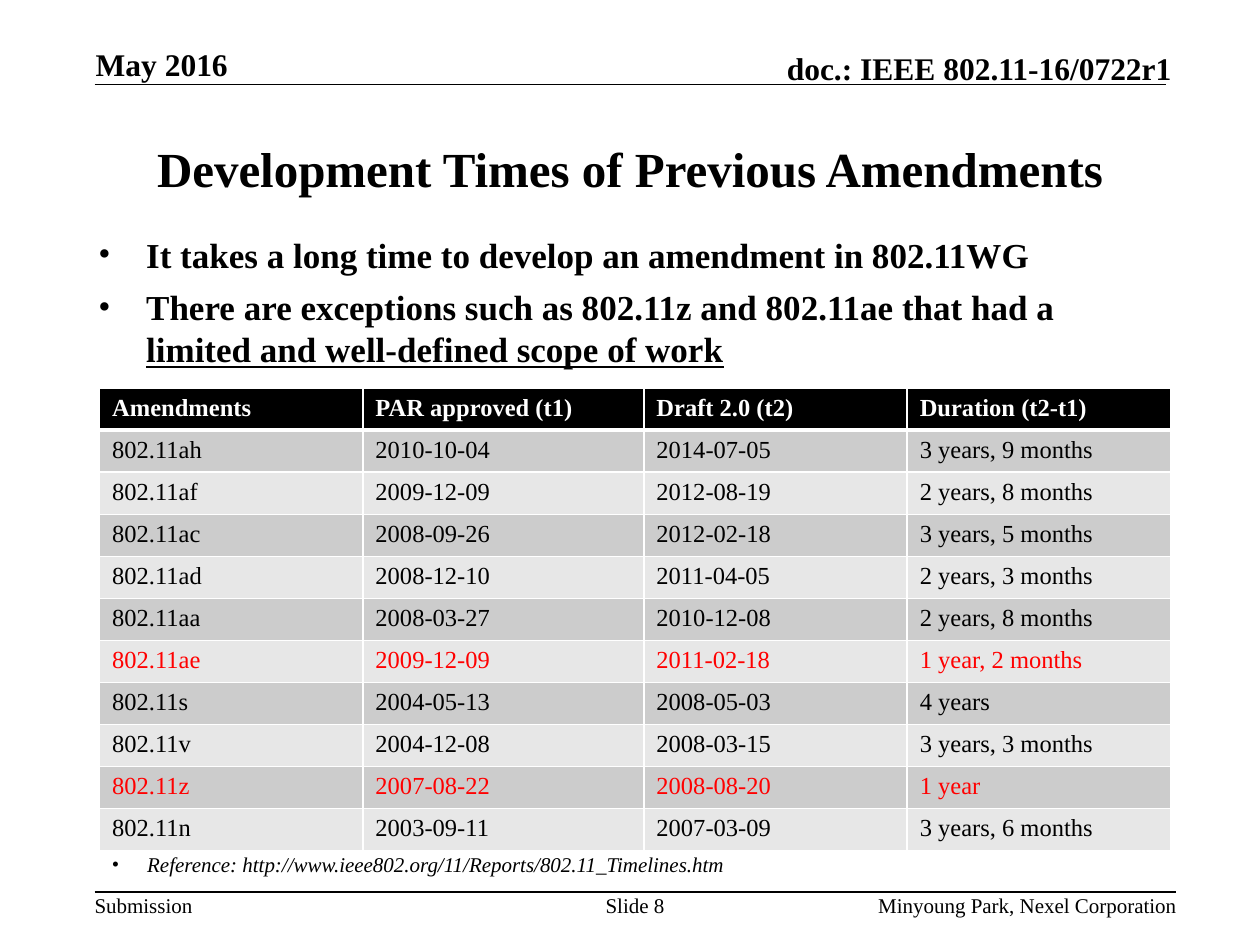
from dataclasses import dataclass

from lxml.etree import SubElement
from pptx import Presentation
from pptx.dml.color import RGBColor
from pptx.enum.shapes import MSO_CONNECTOR
from pptx.enum.text import MSO_ANCHOR, MSO_AUTO_SIZE, PP_ALIGN
from pptx.oxml.ns import qn
from pptx.util import Inches, Pt


@dataclass(frozen=True)
class Theme:
    face: str = "Times New Roman"
    ink: str = "000000"
    paper: str = "FFFFFF"
    alert: str = "FF0000"
    dark: str = "CCCCCC"
    light: str = "E7E7E7"
    title: int = 28
    body: int = 20
    head: int = 18
    cell: int = 14
    small: int = 12


THEME = Theme()
COLS = (2.09, 2.23, 2.09, 2.09)
HEADS = ("Amendments", "PAR approved (t1)", "Draft 2.0 (t2)", "Duration (t2-t1)")
ROWS = (
    ("802.11ah", "2010-10-04", "2014-07-05", "3 years, 9 months"),
    ("802.11af", "2009-12-09", "2012-08-19", "2 years, 8 months"),
    ("802.11ac", "2008-09-26", "2012-02-18", "3 years, 5 months"),
    ("802.11ad", "2008-12-10", "2011-04-05", "2 years, 3 months"),
    ("802.11aa", "2008-03-27", "2010-12-08", "2 years, 8 months"),
    ("802.11ae", "2009-12-09", "2011-02-18", "1 year, 2 months"),
    ("802.11s", "2004-05-13", "2008-05-03", "4 years"),
    ("802.11v", "2004-12-08", "2008-03-15", "3 years, 3 months"),
    ("802.11z", "2007-08-22", "2008-08-20", "1 year"),
    ("802.11n", "2003-09-11", "2007-03-09", "3 years, 6 months"),
)
FAST = {"802.11ae", "802.11z"}


def write(para, text, size, color=THEME.ink, bold=False, italic=False,
          under=False, align=PP_ALIGN.LEFT):
    """Add one formatted run to a paragraph."""
    para.alignment = align
    run = para.add_run()
    run.text = text
    font = run.font
    font.name, font.size = THEME.face, Pt(size)
    font.bold, font.italic, font.underline = bold, italic, under
    font.color.rgb = RGBColor.from_string(color)


def place(shape, left, top, width, height):
    shape.left, shape.top = Inches(left), Inches(top)
    shape.width, shape.height = Inches(width), Inches(height)


def bullet(para, indent):
    props = para._p.get_or_add_pPr()
    props.set("marL", str(Inches(indent)))
    props.set("indent", str(-Inches(indent)))
    SubElement(props, qn("a:buFont"), typeface=THEME.face)
    SubElement(props, qn("a:buChar"), char="•")


def add_box(slide, at, inset=0, anchor=MSO_ANCHOR.TOP):
    """Add a text box and return its first paragraph."""
    frame = slide.shapes.add_textbox(*map(Inches, at)).text_frame
    frame.word_wrap = True
    frame.vertical_anchor = anchor
    frame.margin_left = frame.margin_right = Inches(inset)
    frame.margin_top = frame.margin_bottom = Inches(inset / 2)
    return frame.paragraphs[0]


def add_rule(slide, left, right, top):
    line = slide.shapes.add_connector(
        MSO_CONNECTOR.STRAIGHT, *map(Inches, (left, top, right, top)))
    line.line.color.rgb = RGBColor.from_string(THEME.ink)
    line.line.width = Pt(1)
    SubElement(line._element.spPr, qn("a:effectLst"))


def add_title(slide):
    title = slide.shapes.title
    place(title, 0.75, 0.75, 8.5, 1.16)
    frame = title.text_frame
    frame.vertical_anchor = MSO_ANCHOR.MIDDLE
    frame.auto_size = MSO_AUTO_SIZE.NONE
    write(frame.paragraphs[0], "Development Times of Previous Amendments",
          THEME.title, bold=True, align=PP_ALIGN.CENTER)


def add_points(slide):
    body = slide.placeholders[1]
    place(body, 0.68, 1.8, 8.67, 4.99)
    frame = body.text_frame
    frame.auto_size = MSO_AUTO_SIZE.NONE
    first, second = frame.paragraphs[0], frame.add_paragraph()
    for para, gap in ((first, 0), (second, 6)):
        para.space_before = Pt(gap)
        bullet(para, 0.38)
    write(first, "It takes a long time to develop an amendment in 802.11WG",
          THEME.body, bold=True)
    write(second, "There are exceptions such as 802.11z and 802.11ae that had a ",
          THEME.body, bold=True)
    write(second, "limited and well-defined scope of work",
          THEME.body, bold=True, under=True)


def edge(cell, **widths):
    """Draw cell borders; widths in points by side: L, R, T, B."""
    props = cell._tc.get_or_add_tcPr()
    for side, width in widths.items():
        line = SubElement(props, qn(f"a:ln{side}"), w=str(Pt(width)))
        fill = SubElement(line, qn("a:solidFill"))
        SubElement(fill, qn("a:srgbClr"), val=THEME.paper)


def fill_cell(cell, text, row, color):
    edge(cell, L=1, R=1, T=3 if row == 1 else 1, B=3 if row == 0 else 1)
    shade = THEME.ink if row == 0 else THEME.dark if row % 2 else THEME.light
    cell.fill.solid()
    cell.fill.fore_color.rgb = RGBColor.from_string(shade)
    write(cell.text_frame.paragraphs[0], text, THEME.cell, color, bold=row == 0)


def add_grid(slide):
    data = (HEADS,) + ROWS
    high = 0.31
    table = slide.shapes.add_table(
        len(data), len(COLS), Inches(0.79), Inches(3.08),
        Inches(sum(COLS)), Inches(high * len(data))).table
    for col, width in zip(table.columns, COLS):
        col.width = Inches(width)
    for row, texts in enumerate(data):
        table.rows[row].height = Inches(high)
        color = THEME.ink
        if row == 0:
            color = THEME.paper
        elif texts[0] in FAST:
            color = THEME.alert
        for col, text in enumerate(texts):
            fill_cell(table.cell(row, col), text, row, color)


def add_header(slide):
    add_rule(slide, 0.75, 9.25, 0.67)
    write(add_box(slide, (0.76, 0.36, 2.05, 0.3), anchor=MSO_ANCHOR.BOTTOM),
          "May 2016", THEME.head, bold=True)
    write(add_box(slide, (5.47, 0.39, 3.83, 0.3), anchor=MSO_ANCHOR.BOTTOM),
          "doc.: IEEE 802.11-16/0722r1", THEME.head, bold=True,
          align=PP_ALIGN.RIGHT)


def add_footer(slide):
    top = 7.08
    add_rule(slide, 0.75, 9.33, top)
    for text, left, width, align in (
        ("Submission", 0.75, 0.78, PP_ALIGN.LEFT),
        ("Slide 8", 4.75, 0.58, PP_ALIGN.CENTER),
        ("Minyoung Park, Nexel Corporation", 5.86, 3.48, PP_ALIGN.RIGHT),
    ):
        write(add_box(slide, (left, top, width, 0.2)), text, THEME.small,
              align=align)


def add_source(slide):
    para = add_box(slide, (0.79, 6.71, 6.63, 0.3), inset=0.1)
    bullet(para, 0.28)
    write(para, "Reference: http://www.ieee802.org/11/Reports/802.11_Timelines.htm",
          THEME.small, italic=True)


def main():
    deck = Presentation()
    deck.slide_width, deck.slide_height = Inches(10), Inches(7.5)
    slide = deck.slides.add_slide(deck.slide_layouts[1])
    add_header(slide)
    add_title(slide)
    add_points(slide)
    add_grid(slide)
    add_source(slide)
    add_footer(slide)
    deck.save("out.pptx")


if __name__ == "__main__":
    main()
